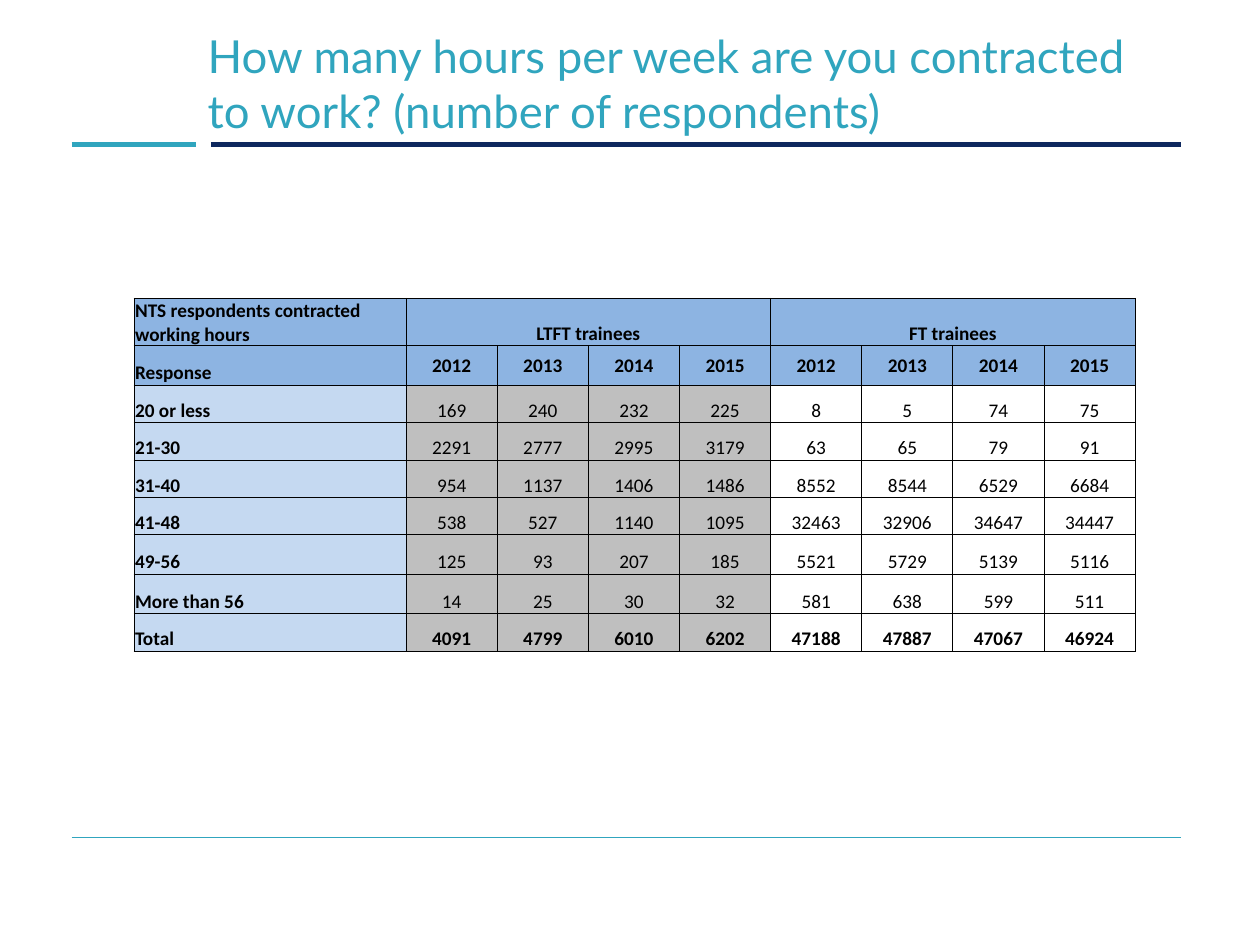
from lxml import etree
from pptx import Presentation
from pptx.dml.color import RGBColor
from pptx.enum.shapes import MSO_CONNECTOR as Connector
from pptx.enum.text import MSO_ANCHOR as Anchor, PP_ALIGN as Align
from pptx.oxml import parse_xml
from pptx.oxml.ns import nsdecls, qn
from pptx.util import Pt

TEAL = RGBColor(0x30, 0xA5, 0xBE)
NAVY = RGBColor(0x0E, 0x28, 0x5E)
BLACK = RGBColor(0, 0, 0)
WHITE = RGBColor(0xFF, 0xFF, 0xFF)
HEADER_BLUE = RGBColor(0x8D, 0xB4, 0xE2)
LABEL_BLUE = RGBColor(0xC5, 0xD9, 0xF1)
LTFT_GREY = RGBColor(0xBF, 0xBF, 0xBF)

YEARS = ["2012", "2013", "2014", "2015"]
ROWS = [
    ["NTS respondents contracted working hours",
     "LTFT trainees", "", "", "", "FT trainees", "", "", ""],
    ["Response", *YEARS, *YEARS],
    ["20 or less", 169, 240, 232, 225, 8, 5, 74, 75],
    ["21-30", 2291, 2777, 2995, 3179, 63, 65, 79, 91],
    ["31-40", 954, 1137, 1406, 1486, 8552, 8544, 6529, 6684],
    ["41-48", 538, 527, 1140, 1095, 32463, 32906, 34647, 34447],
    ["49-56", 125, 93, 207, 185, 5521, 5729, 5139, 5116],
    ["More than 56", 14, 25, 30, 32, 581, 638, 599, 511],
    ["Total", 4091, 4799, 6010, 6202, 47188, 47887, 47067, 46924],
]
ROW_HEIGHTS = [23.8, 22.7, 21.4, 21.4, 21.4, 21.4, 22.4, 22.6, 21.4]
COLUMN_WIDTHS = [155.5] + [52.1] * 8
CELL_FORMAT = {"margin_left": Pt(0.6), "margin_right": Pt(0.6),
               "margin_top": Pt(0.6), "margin_bottom": 0}


def style_font(font, **values):
    color = values.pop("color")
    for name, value in values.items():
        setattr(font, name, value)
    font.color.rgb = color


def add_borders(cell):
    properties = cell._tc.get_or_add_tcPr()
    for position, side in enumerate(("lnL", "lnR", "lnT", "lnB")):
        properties.insert(position, parse_xml(
            f'<a:{side} {nsdecls("a")} w="6350"><a:solidFill>'
            f'<a:srgbClr val="{BLACK}"/></a:solidFill></a:{side}>'))


deck = Presentation()
deck.slide_width, deck.slide_height = Pt(720), Pt(540)
slide = deck.slides.add_slide(deck.slide_layouts[6])

# Rules under the title and above the footer
for left, right, y, color, weight in [
    (120.5, 675, 82.6, NAVY, 3),
    (41, 112, 82.6, TEAL, 3),
    (41, 675, 478.6, TEAL, 0.75),
]:
    rule = slide.shapes.add_connector(
        Connector.STRAIGHT, Pt(left), Pt(y), Pt(right), Pt(y))
    rule.line.color.rgb = color
    rule.line.width = Pt(weight)
    etree.SubElement(rule._element.spPr, qn("a:effectLst"))

# Title
title = slide.shapes.add_textbox(Pt(111.6), Pt(20.9), Pt(563.8), Pt(52.6)).text_frame
title.word_wrap = True
title.vertical_anchor = Anchor.MIDDLE
title.text = "How many hours per week are you contracted to work? (number of respondents)"
style_font(title.paragraphs[0].runs[0].font, name="Lato", size=Pt(26), color=TEAL)

# Table of respondents
hours = slide.shapes.add_table(
    len(ROWS), len(COLUMN_WIDTHS), Pt(76.6), Pt(170.4),
    Pt(sum(COLUMN_WIDTHS)), Pt(202.5)).table
for column, width in zip(hours.columns, COLUMN_WIDTHS):
    column.width = Pt(width)
for row, height in zip(hours.rows, ROW_HEIGHTS):
    row.height = Pt(height)

for r, values in enumerate(ROWS):
    for c, value in enumerate(values):
        cell = hours.cell(r, c)
        for name, setting in CELL_FORMAT.items():
            setattr(cell, name, setting)
        cell.vertical_anchor = Anchor.MIDDLE if r == 1 and c > 0 else Anchor.BOTTOM
        cell.fill.solid()
        if r < 2:
            cell.fill.fore_color.rgb = HEADER_BLUE
        elif c == 0:
            cell.fill.fore_color.rgb = LABEL_BLUE
        else:
            cell.fill.fore_color.rgb = LTFT_GREY if c <= len(YEARS) else WHITE
        add_borders(cell)
        cell.text = str(value)
        paragraph = cell.text_frame.paragraphs[0]
        paragraph.alignment = Align.CENTER if c else Align.LEFT
        bold = r < 2 or c == 0 or r == len(ROWS) - 1
        style_font(paragraph.font, name="Calibri", size=Pt(11), bold=bold, color=BLACK)
        for run in paragraph.runs:
            style_font(run.font, name="Calibri", size=Pt(11), bold=bold, color=BLACK)

# Each trainee group heads its four years
for first in (1, 5):
    hours.cell(0, first).merge(hours.cell(0, first + len(YEARS) - 1))

deck.save("out.pptx")
